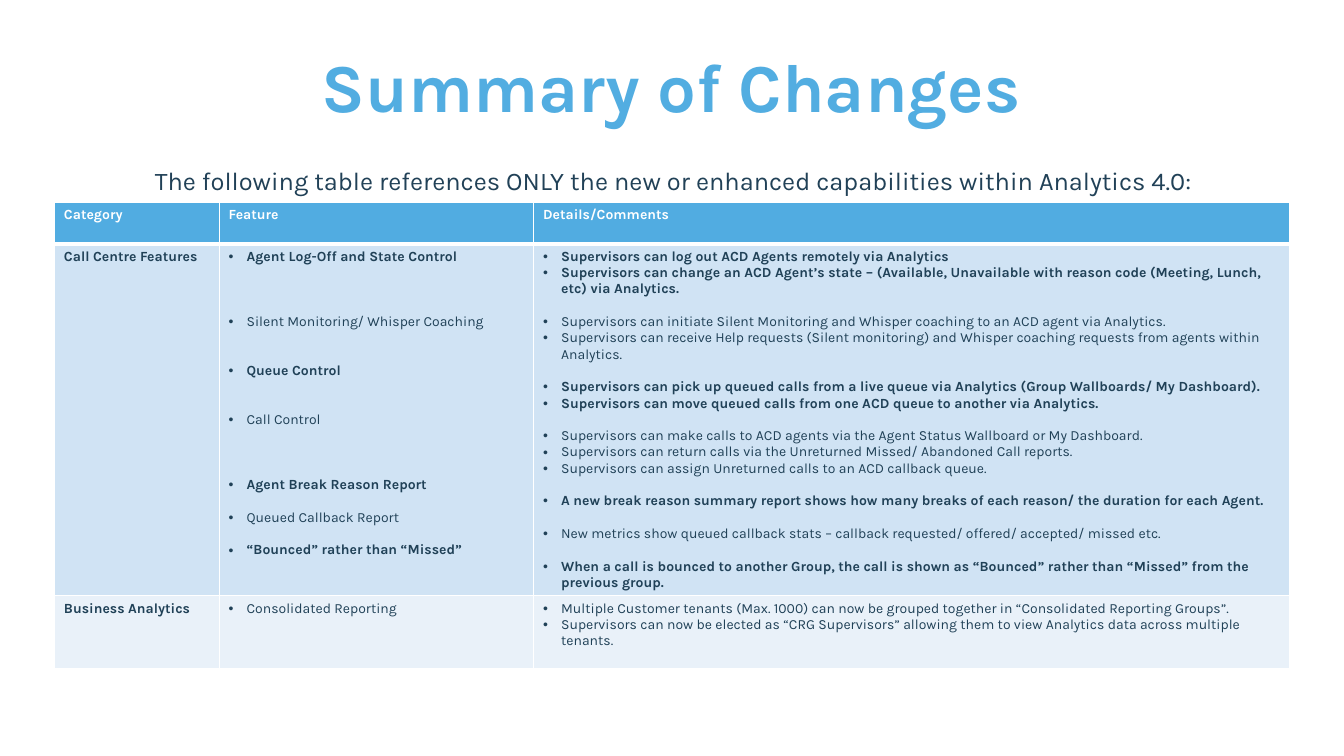
from lxml import etree
from pptx import Presentation
from pptx import util as u
from pptx.dml.color import RGBColor
from pptx.enum import text
from pptx.oxml.ns import qn

Pt = u.Pt
FONT = "Karla"
LINE = 12.85  # height of one 11 pt line
COLORS = {"title": "52ADE1", "intro": "214157", "header": "51ACE1", "body": "204157",
          "call_centre": "D0E3F4", "analytics": "E9F1F9", "white": "FFFFFF"}

# Each bullet: wording, bold, empty lines that follow
CALL_FEATURES = [
    ("Agent Log-Off and State Control", True, 3),
    ("Silent Monitoring/ Whisper Coaching", False, 2),
    ("Queue Control", True, 2),
    ("Call Control", False, 3),
    ("Agent Break Reason Report", True, 1),
    ("Queued Callback Report", False, 1),
    ("“Bounced” rather than “Missed”", True, 0),
]
CALL_DETAILS = [
    ("Supervisors can log out ACD Agents remotely via Analytics", True, 0),
    ("Supervisors can change an ACD Agent’s state – (Available, Unavailable with reason code "
     "(Meeting, Lunch, etc) via Analytics.", True, 1),
    ("Supervisors can initiate Silent Monitoring and Whisper coaching to an ACD agent via "
     "Analytics.", False, 0),
    ("Supervisors can receive Help requests (Silent monitoring) and Whisper coaching requests "
     "from agents within Analytics.", False, 1),
    ("Supervisors can pick up queued calls from a live queue via Analytics (Group Wallboards/ "
     "My Dashboard).", True, 0),
    ("Supervisors can move queued calls from one ACD queue to another via Analytics.", True, 1),
    ("Supervisors can make calls to ACD agents via the Agent Status Wallboard or My Dashboard.",
     False, 0),
    ("Supervisors can return calls via the Unreturned Missed/ Abandoned Call reports.", False, 0),
    ("Supervisors can assign Unreturned calls to an ACD callback queue.", False, 1),
    ("A new break reason summary report shows how many breaks of each reason/ the duration for "
     "each Agent.", True, 1),
    ("New metrics show queued callback stats – callback requested/ offered/ accepted/ missed "
     "etc.", False, 1),
    ("When a call is bounced to another Group, the call is shown as “Bounced” rather than "
     "“Missed” from the previous group.", True, 0),
]
ANALYTICS_FEATURES = [("Consolidated Reporting", False, 0)]
ANALYTICS_DETAILS = [
    ("Multiple Customer tenants (Max. 1000) can now be grouped together in “Consolidated "
     "Reporting Groups”.", False, 0),
    ("Supervisors can now be elected as “CRG Supervisors” allowing them to view Analytics data "
     "across multiple tenants.", False, 0),
]


def add_run(paragraph, wording, size, color, bold=False):
    run = paragraph.add_run()
    run.text = wording
    run.font.name = FONT
    run.font.size = Pt(size)
    run.font.bold = bold
    run.font.color.rgb = RGBColor.from_string(COLORS[color])


def fill_placeholder(holder, box, wording, size, color, anchor, bold=False):
    holder.left, holder.top, holder.width, holder.height = map(Pt, box)
    frame = holder.text_frame
    frame.word_wrap = True
    frame.auto_size = text.MSO_AUTO_SIZE.NONE
    frame.vertical_anchor = anchor
    frame.margin_left = frame.margin_right = Pt(8)
    frame.margin_top = frame.margin_bottom = Pt(4)
    line = frame.paragraphs[0]
    props = line._p.get_or_add_pPr()
    props.set("marL", "0")
    props.set("indent", "0")
    etree.SubElement(props, qn("a:buNone"))
    line.alignment = text.PP_ALIGN.CENTER
    line.space_before = Pt(0)
    add_run(line, wording, size, color, bold)


def add_bullets(cell, bullets):
    frame = cell.text_frame
    for number, (wording, bold, empty_lines) in enumerate(bullets):
        item = frame.add_paragraph() if number else frame.paragraphs[0]
        props = item._p.get_or_add_pPr()
        props.set("marL", str(Pt(14.2)))
        props.set("indent", str(Pt(-14.2)))
        etree.SubElement(props, qn("a:buFont"), typeface="Arial")
        etree.SubElement(props, qn("a:buChar"), char="•")
        if empty_lines:
            item.space_after = Pt(LINE * empty_lines)
        add_run(item, wording, 11, "body", bold)


def style_cell(cell, color, bottom_width):
    cell.fill.solid()
    cell.fill.fore_color.rgb = RGBColor.from_string(COLORS[color])
    props = cell._tc.get_or_add_tcPr()
    for place, side in enumerate(("lnL", "lnR", "lnT", "lnB")):
        width = bottom_width if side == "lnB" else 1
        border = etree.Element(qn("a:" + side), w=str(Pt(width)))
        fill = etree.SubElement(border, qn("a:solidFill"))
        etree.SubElement(fill, qn("a:srgbClr"), val=COLORS["white"])
        props.insert(place, border)


def add_changes_table(slide, box):
    left, top, width, height = box
    changes = slide.shapes.add_table(3, 3, Pt(left), Pt(top), Pt(width), Pt(height)).table
    category, feature = 129.6, 247.7
    header, analytics = 33, 57.5
    for column, size in zip(changes.columns, (category, feature, width - category - feature)):
        column.width = Pt(size)
    for row, size in zip(changes.rows, (header, height - header - analytics, analytics)):
        row.height = Pt(size)

    # Header row
    for column, heading in enumerate(("Category", "Feature", "Details/Comments")):
        cell = changes.cell(0, column)
        style_cell(cell, "header", 3)
        add_run(cell.text_frame.paragraphs[0], heading, 11, "white", True)

    # Category rows
    categories = [
        ("Call Centre Features", "call_centre", CALL_FEATURES, CALL_DETAILS),
        ("Business Analytics", "analytics", ANALYTICS_FEATURES, ANALYTICS_DETAILS),
    ]
    for row, (name, color, features, details) in enumerate(categories, 1):
        for column in range(3):
            style_cell(changes.cell(row, column), color, 1)
        add_run(changes.cell(row, 0).text_frame.paragraphs[0], name, 11, "body", True)
        add_bullets(changes.cell(row, 1), features)
        add_bullets(changes.cell(row, 2), details)


def build_summary_slide(deck):
    slide = deck.slides.add_slide(deck.slide_layouts[1])
    fill_placeholder(slide.shapes.title, (70.6, 47.5, 915.8, 38.9), "Summary of Changes",
                     54, "title", text.MSO_ANCHOR.MIDDLE, True)
    fill_placeholder(slide.placeholders[1], (72.7, 126, 915.8, 378),
                     "The following table references ONLY the new or enhanced capabilities "
                     "within Analytics 4.0:", 20, "intro", text.MSO_ANCHOR.TOP)
    add_changes_table(slide, (43.2, 159.1, 972, 367.5))


def main():
    deck = Presentation()
    deck.slide_width, deck.slide_height = Pt(1058.4), Pt(595.4)
    build_summary_slide(deck)
    deck.save("out.pptx")


if __name__ == "__main__":
    main()
